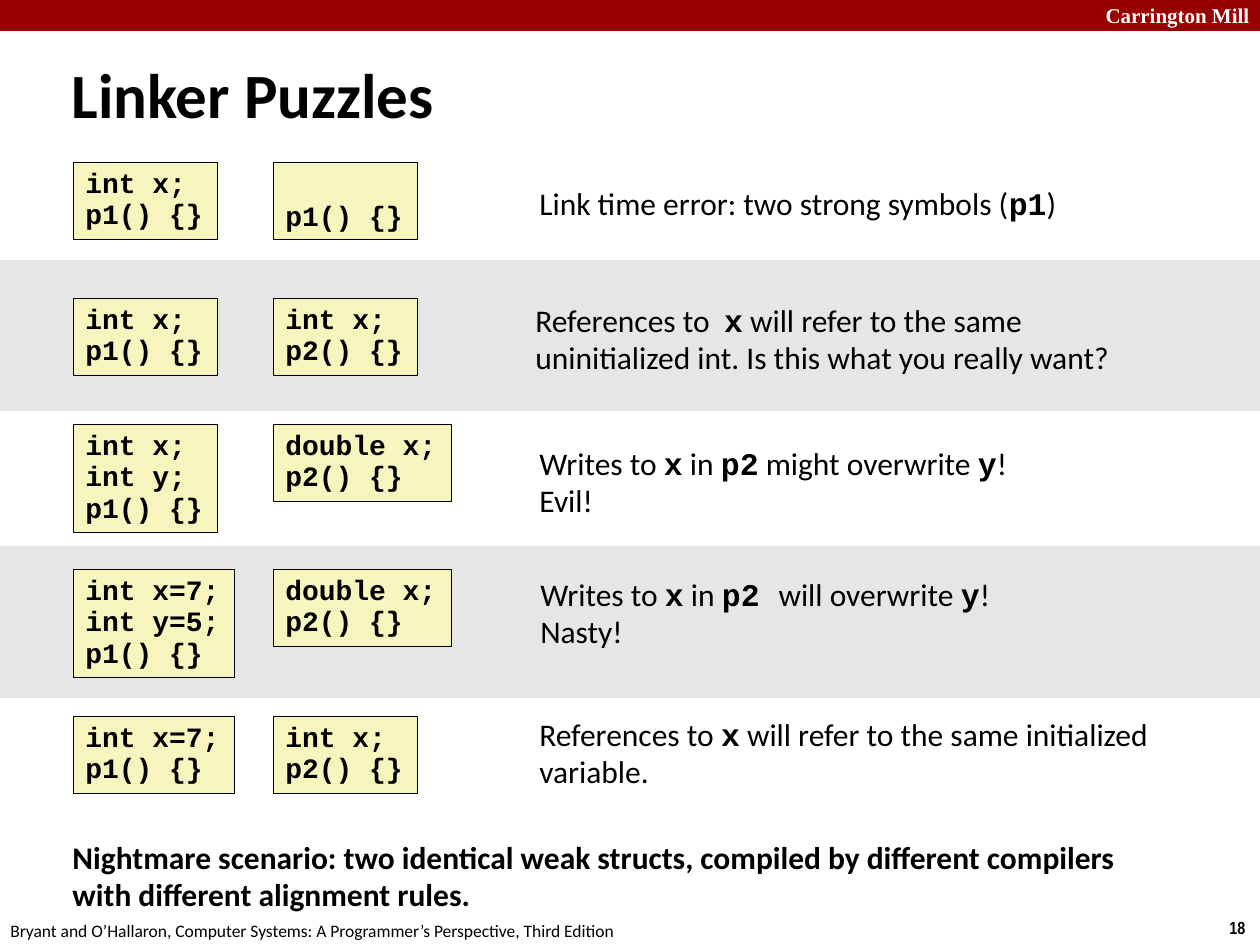
import pptx
import pptx.util
from pptx.dml.color import RGBColor
from pptx.enum.shapes import MSO_SHAPE
from pptx.enum.text import MSO_ANCHOR, MSO_AUTO_SIZE, PP_ALIGN

BLACK = RGBColor(0x00, 0x00, 0x00)
WHITE = RGBColor(0xFF, 0xFF, 0xFF)
RED = RGBColor(0x99, 0x00, 0x00)
GREY = RGBColor(0xE6, 0xE6, 0xE6)
YELLOW = RGBColor(0xF6, 0xF5, 0xBD)

SLIDE_SIZE = (1260, 945)
TITLE = "Linker Puzzles"
TITLE_BOX = (59, 39, 1201, 108)
HEADER_BAR = (0, 0, 1260, 31)
BANDS = [(0, 546, 1260, 152), (0, 260, 1260, 151)]
CODE_LEFTS = (73, 273)

# Code top, code of both modules, answer position and lines; `...` marks code words.
PUZZLES = [
    (162, (["int x;", "p1() {}"], ["p1() {}"]), (527, 180),
     ["Link time error: two strong symbols (`p1`)"]),
    (298, (["int x;", "p1() {}"], ["int x;", "p2() {}"]), (523, 297),
     ["References to  `x` will refer to the same",
      "uninitialized int. Is this what you really want?"]),
    (424, (["int x;", "int y;", "p1() {}"], ["double x;", "p2() {}"]), (527, 440),
     ["Writes to `x` in `p2` might overwrite `y`!", "Evil!"]),
    (569, (["int x=7;", "int y=5;", "p1() {}"], ["double x;", "p2() {}"]), (528, 571),
     ["Writes to `x` in `p2 `will overwrite `y`!", "Nasty!"]),
    (716, (["int x=7;", "p1() {}"], ["int x;", "p2() {}"]), (527, 711),
     ["References to `x` will refer to the same initialized", "variable."]),
]
NIGHTMARE = ["Nightmare scenario: two identical weak structs, compiled by different compilers",
             "with different alignment rules."]
CITATION = "Bryant and O’Hallaron, Computer Systems: A Programmer’s Perspective, Third Edition"

TITLE_FONT = {"name": "Calibri", "size": pptx.util.Pt(36), "bold": True}
BODY_FONT = {"name": "Calibri", "size": pptx.util.Pt(18), "bold": False}
BOLD_FONT = {**BODY_FONT, "bold": True}
WORD_FONT = {**BOLD_FONT, "name": "Courier New"}
CODE_FONT = {**WORD_FONT, "size": pptx.util.Pt(16)}
HEADER_FONT = {"name": "Times New Roman", "size": pptx.util.Pt(12), "bold": True}
NUMBER_FONT = {"name": "Arial Narrow", "size": pptx.util.Pt(10), "bold": True}
CITATION_FONT = {"name": "Calibri", "size": pptx.util.Pt(10), "bold": False}


def px(*lengths):
    return [pptx.util.Emu(length * 914400 // 126) for length in lengths]


def write(shape, lines, font, spacing=1.0, align=PP_ALIGN.LEFT,
          anchor=MSO_ANCHOR.TOP, color=BLACK):
    """Fill a shape with lines, setting the words between backticks in WORD_FONT."""
    frame = shape.text_frame
    frame.auto_size = MSO_AUTO_SIZE.NONE
    frame.word_wrap = False
    frame.vertical_anchor = anchor
    for index, line in enumerate(lines):
        paragraph = frame.add_paragraph() if index else frame.paragraphs[0]
        paragraph.alignment = align
        paragraph.line_spacing = spacing
        for part, text in enumerate(line.split("`")):
            if text:
                run = paragraph.add_run()
                run.text = text
                for name, value in (WORD_FONT if part % 2 else font).items():
                    setattr(run.font, name, value)
                run.font.color.rgb = color


def add_text(slide, box, lines, font, **options):
    write(slide.shapes.add_textbox(*px(*box)), lines, font, **options)


def add_rectangle(slide, box, color):
    shape = slide.shapes.add_shape(MSO_SHAPE.RECTANGLE, *px(*box))
    shape.shadow.inherit = False
    shape.fill.solid()
    shape.fill.fore_color.rgb = color
    shape.line.fill.background()
    return shape


def add_code(slide, left, top, lines, line_count):
    """Add a code box sized by its longest line and the given number of lines."""
    width = 25 + 17 * max(map(len, lines))
    shape = add_rectangle(slide, (left, top, width, 15 + 31 * line_count), YELLOW)
    shape.line.color.rgb = BLACK
    shape.line.width = pptx.util.Pt(0.25)
    anchor = MSO_ANCHOR.BOTTOM if len(lines) < line_count else MSO_ANCHOR.TOP
    write(shape, lines, CODE_FONT, spacing=0.94, anchor=anchor)


def main():
    presentation = pptx.Presentation()
    presentation.slide_width, presentation.slide_height = px(*SLIDE_SIZE)
    slide = presentation.slides.add_slide(presentation.slide_layouts[5])

    title = slide.shapes.title
    title.left, title.top, title.width, title.height = px(*TITLE_BOX)
    write(title, [TITLE], TITLE_FONT, anchor=MSO_ANCHOR.MIDDLE)

    add_rectangle(slide, HEADER_BAR, RED)
    add_text(slide, (1089, -4, 173, 38), ["Carrington Mill"], HEADER_FONT,
             align=PP_ALIGN.RIGHT, color=WHITE)
    add_text(slide, (1217, 911, 43, 34), ["18"], NUMBER_FONT)
    add_text(slide, (-2, 914, 640, 34), [CITATION], CITATION_FONT)

    for band in BANDS:
        add_rectangle(slide, band, GREY)
    for top, modules, (answer_left, answer_top), answer in PUZZLES:
        for left, lines in zip(CODE_LEFTS, modules):
            add_code(slide, left, top, lines, max(2, len(lines)))
        add_text(slide, (answer_left, answer_top, 640, 13 + 37 * len(answer)),
                 answer, BODY_FONT, spacing=0.98)
    add_text(slide, (60, 834, 1076, 88), NIGHTMARE, BOLD_FONT, spacing=0.98)

    presentation.save("out.pptx")


if __name__ == "__main__":
    main()
